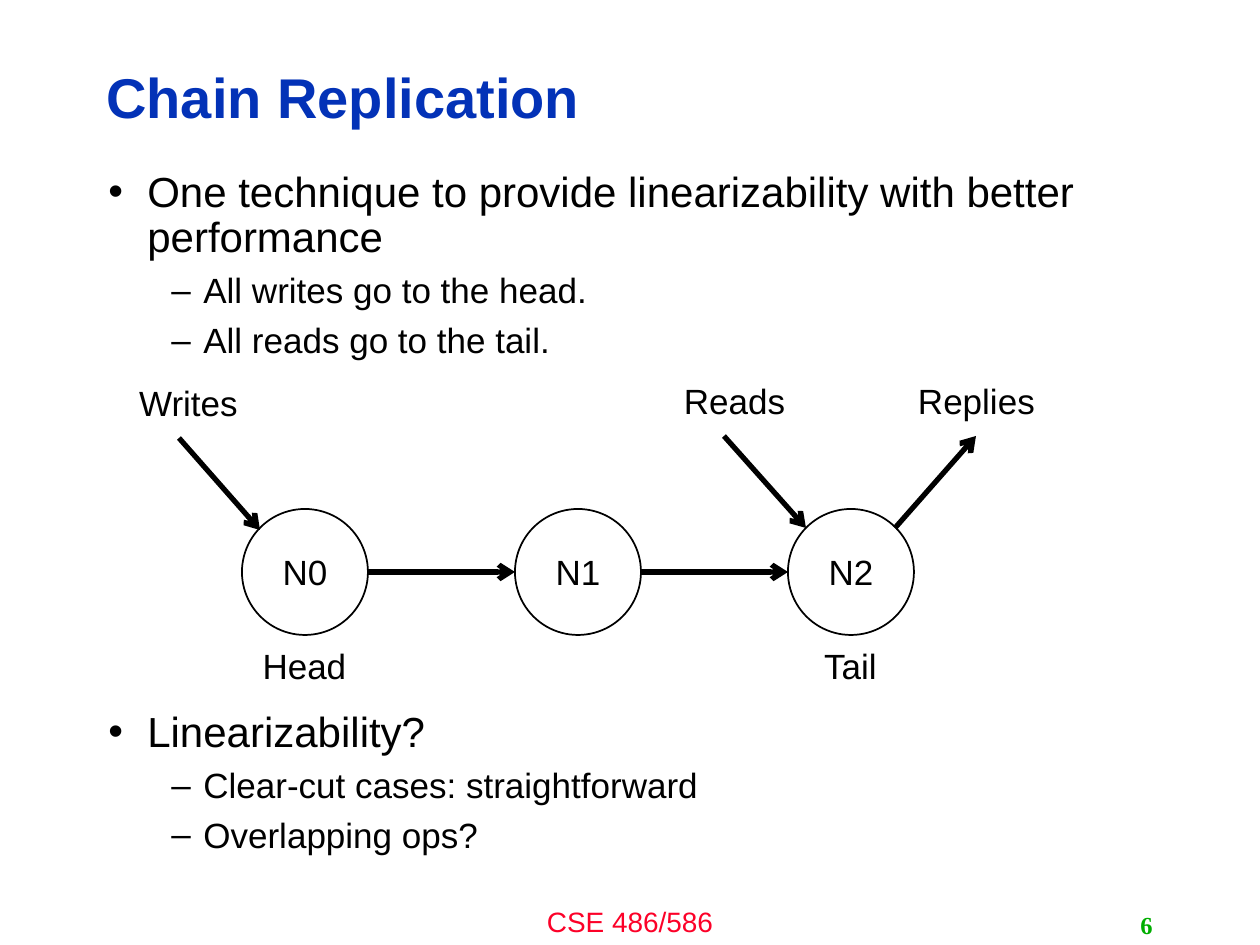
import pptx
import pptx.util
import pptx.dml.color
import pptx.enum.shapes
import pptx.enum.text
import pptx.oxml.ns
import lxml.etree

PX = 914400 / 126  # EMU in one px

THEME = {
    "font": "Arial", "number_font": "Times New Roman",
    "ink": "000000", "paper": "FFFFFF",
    "title": "0332B7", "footer": "FC0128", "number": "00AE00",
    "title_size": 32, "point_size": 24, "text_size": 20,
    "footer_size": 16, "number_size": 14,
}
ALIGN = pptx.enum.text.PP_ALIGN
ANCHOR = pptx.enum.text.MSO_ANCHOR
rgb = pptx.dml.color.RGBColor.from_string
qn = pptx.oxml.ns.qn


def px(*lengths):
    return [pptx.util.Emu(round(length * PX)) for length in lengths]


def write(paragraph, text, size, color=THEME["ink"], align=ALIGN.CENTER,
          bold=False, font=THEME["font"]):
    paragraph.alignment = align
    run = paragraph.add_run()
    run.text = text
    run.font.name = font
    run.font.size = pptx.util.Pt(size)
    run.font.bold = bold
    run.font.color.rgb = rgb(color)


deck = pptx.Presentation()
deck.slide_width, deck.slide_height = px(1260, 945)
slide = deck.slides.add_slide(deck.slide_layouts[6])
shapes = slide.shapes

# Title, footer, page number and diagram labels
size = THEME["text_size"]
texts = [
    ("Chain Replication", (94, 45, 1006, 102), ANCHOR.MIDDLE,
     dict(size=THEME["title_size"], color=THEME["title"], align=ALIGN.LEFT, bold=True)),
    ("CSE 486/586", (420, 898, 420, 47), ANCHOR.TOP,
     dict(size=THEME["footer_size"], color=THEME["footer"])),
    ("6", (903, 905, 262, 40), ANCHOR.MIDDLE,
     dict(size=THEME["number_size"], color=THEME["number"], align=ALIGN.RIGHT,
          bold=True, font=THEME["number_font"])),
    ("Writes", (94, 375, 189, 55), ANCHOR.TOP, dict(size=size)),
    ("Reads", (640, 373, 189, 55), ANCHOR.TOP, dict(size=size)),
    ("Replies", (882, 373, 189, 55), ANCHOR.TOP, dict(size=size)),
    ("Head", (210, 638, 189, 55), ANCHOR.TOP, dict(size=size)),
    ("Tail", (756, 638, 189, 55), ANCHOR.TOP, dict(size=size)),
]
for text, place, anchor, style in texts:
    frame = shapes.add_textbox(*px(*place)).text_frame
    frame.word_wrap = True
    frame.vertical_anchor = anchor
    write(frame.paragraphs[0], text, **style)

# Bullet points, with room left for the diagram before the second point
points = [
    (0, "One technique to provide linearizability with better performance", 0),
    (1, "All writes go to the head.", 6.75),
    (1, "All reads go to the tail.", 6.75),
    (0, "Linearizability?", 200),
    (1, "Clear-cut cases: straightforward", 6.75),
    (1, "Overlapping ops?", 6.75),
]
levels = [("•", 39, 39, THEME["point_size"]), ("–", 95, 32, THEME["text_size"])]
body = shapes.add_textbox(*px(96, 165, 1058, 679)).text_frame
body.word_wrap = True
for index, (level, text, space) in enumerate(points):
    mark, margin, hanging, size = levels[level]
    paragraph = body.add_paragraph() if index else body.paragraphs[0]
    paragraph.level = level
    paragraph.line_spacing = 0.9
    paragraph.space_before = pptx.util.Pt(space)
    write(paragraph, text, size, align=ALIGN.LEFT)
    properties = paragraph._p.get_or_add_pPr()
    margin, hanging = px(margin, hanging)
    properties.set("marL", str(margin))
    properties.set("indent", str(-hanging))
    lxml.etree.SubElement(properties, qn("a:buFont")).set("typeface", THEME["font"])
    lxml.etree.SubElement(properties, qn("a:buChar")).set("char", mark)

# Chain of nodes
left, top, diameter, pitch = 242, 509, 126, 273
for index in range(3):
    node = shapes.add_shape(pptx.enum.shapes.MSO_SHAPE.OVAL,
                            *px(left + index * pitch, top, diameter, diameter))
    node.shadow.inherit = False
    node.fill.solid()
    node.fill.fore_color.rgb = rgb(THEME["paper"])
    node.line.color.rgb = rgb(THEME["ink"])
    node.line.width = pptx.util.Pt(1)
    node.text_frame.vertical_anchor = ANCHOR.MIDDLE
    write(node.text_frame.paragraphs[0], f"N{index}", THEME["text_size"])

# Arrows: along the chain, then writes, reads and replies
middle = top + diameter // 2
arrows = [(left + index * pitch + diameter, middle, left + (index + 1) * pitch, middle)
          for index in range(2)]
arrows += [(179, 438, 260, 530), (724, 436, 806, 528), (895, 528, 976, 436)]
for ends in arrows:
    arrow = shapes.add_connector(pptx.enum.shapes.MSO_CONNECTOR.STRAIGHT, *px(*ends))
    arrow.line.color.rgb = rgb(THEME["ink"])
    arrow.line.width = pptx.util.Pt(3)
    lxml.etree.SubElement(arrow.line._get_or_add_ln(), qn("a:tailEnd")).set("type", "arrow")
    lxml.etree.SubElement(arrow._element.spPr, qn("a:effectLst"))

deck.save("out.pptx")
